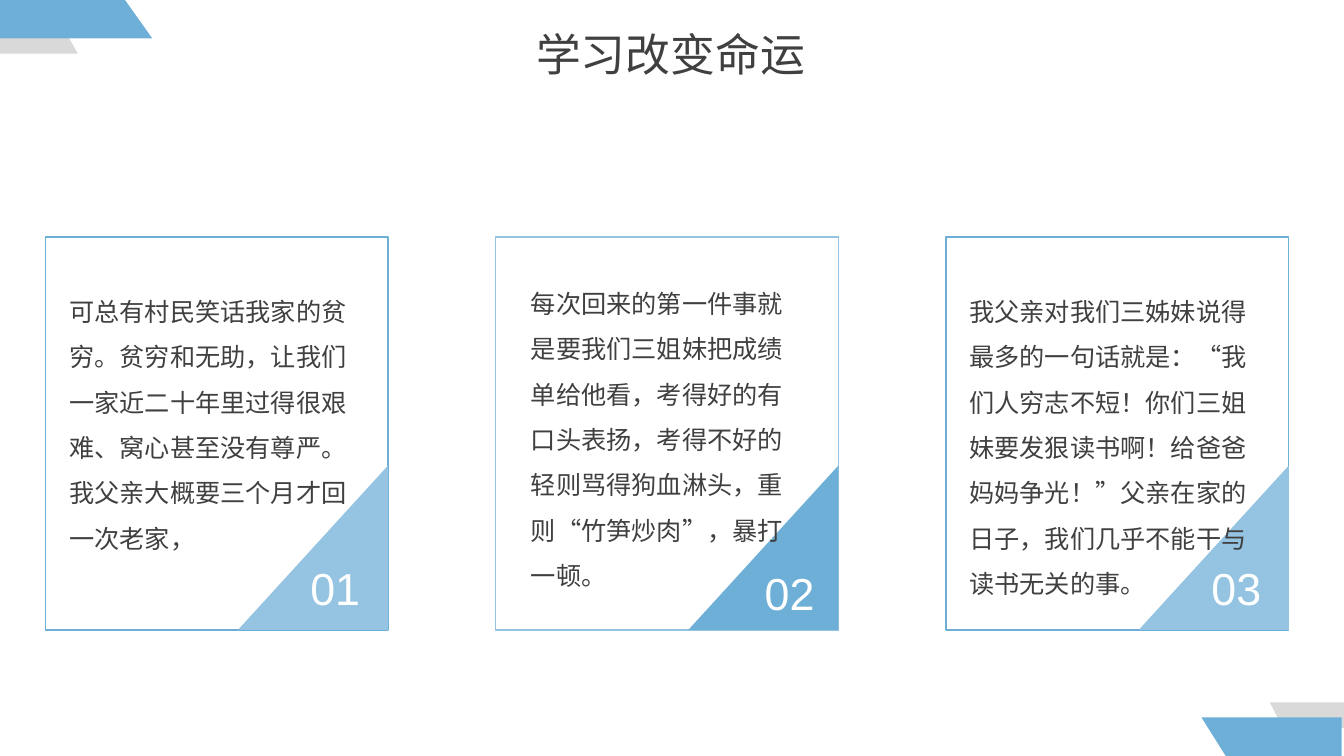
"""Build a slide with three numbered story cards and slanted corner bands."""
from pptx import Presentation
from pptx.dml.color import RGBColor
from pptx.enum.shapes import MSO_SHAPE as Shape
from pptx.enum.text import PP_ALIGN as Align
from pptx.oxml.ns import qn
from pptx.util import Cm, Pt
from lxml.etree import SubElement

COLORS = {"blue": "6EAFD8", "light": "94C4E2", "gray": "D9D9D9",
          "text": "404040", "white": "FFFFFF"}
CJK = "Noto Sans CJK SC"


def paint(shape, fill=None, line=None):
    shape.shadow.inherit = False
    if fill:
        shape.fill.solid()
        shape.fill.fore_color.rgb = RGBColor.from_string(COLORS[fill])
    else:
        shape.fill.background()
    if line:
        shape.line.color.rgb = RGBColor.from_string(COLORS[line])
        shape.line.width = Pt(1)
    else:
        shape.line.fill.background()


def write(page, frame, words, size, face, color, align=Align.LEFT, spacing=1.0):
    box = page.shapes.add_textbox(*[Cm(value) for value in frame])
    box.text_frame.word_wrap = True
    para = box.text_frame.paragraphs[0]
    para.text = words
    para.alignment = align
    para.line_spacing = spacing
    para.font.size = Pt(size)
    para.font.name = face
    para.font.color.rgb = RGBColor.from_string(COLORS[color])
    defaults = para._p.pPr.find(qn("a:defRPr"))
    SubElement(defaults, qn("a:ea")).set("typeface", face)


deck = Presentation()
deck.slide_width, deck.slide_height = Cm(33.87), Cm(19.05)
page = deck.slides.add_slide(deck.slide_layouts[6])

corner_bands = [
    ("gray", [(-0.08, 0.71), (1.6, 0.71), (1.96, 1.35), (-0.08, 1.35)]),
    ("blue", [(-0.03, 0), (3.15, 0), (3.84, 0.97), (-0.03, 0.97)]),
    ("gray", [(33.87, 18.34), (32.33, 18.34), (32, 17.7), (33.87, 17.7)]),
    ("blue", [(33.81, 19.05), (30.89, 19.05), (30.28, 18.08), (33.81, 18.08)]),
]
for color, corners in corner_bands:
    start, *others = [(Cm(x), Cm(y)) for x, y in corners]
    builder = page.shapes.build_freeform(*start)
    builder.add_line_segments(others, close=True)
    paint(builder.convert_to_shape(), fill=color)

write(page, (13.26, 0.56, 8, 1.63), "学习改变命运", 32, CJK, "text", Align.JUSTIFY)

cards = [
    ("blue", "light", (7.57, 14), (1.5, 6.96, 7.92, 7.19),
     "可总有村民笑话我家的贫穷。贫穷和无助，让我们一家近二十年里过得很艰难、"
     "窝心甚至没有尊严。我父亲大概要三个月才回一次老家，"),
    ("light", "blue", (19.02, 14.12), (13.13, 6.76, 7.37, 8.33),
     "每次回来的第一件事就是要我们三姐妹把成绩单给他看，考得好的有口头表扬，"
     "考得不好的轻则骂得狗血淋头，重则“竹笋炒肉”，暴打一顿。"),
    ("blue", "light", (30.28, 14), (24.18, 6.96, 7.87, 8.33),
     "我父亲对我们三姊妹说得最多的一句话就是：“我们人穷志不短！你们三姐妹要发狠读书啊！"
     "给爸爸妈妈争光！”父亲在家的日子，我们几乎不能干与读书无关的事。"),
]
for index, (border, accent, number_at, story_frame, story) in enumerate(cards):
    left = 1.14 + index * 11.35
    card = page.shapes.add_shape(Shape.RECTANGLE, Cm(left), Cm(5.97), Cm(8.64), Cm(9.91))
    paint(card, line=border)
    corner = page.shapes.add_shape(Shape.RIGHT_TRIANGLE, Cm(left + 4.68), Cm(11.91),
                                   Cm(4.14), Cm(3.78))
    corner.rotation = 270
    paint(corner, fill=accent)
    write(page, (*number_at, 2.21, 1.63), f"{index + 1:02}", 32, "Arial", "white")
    write(page, story_frame, story, 18, CJK, "text", spacing=1.5)

deck.save("out.pptx")
